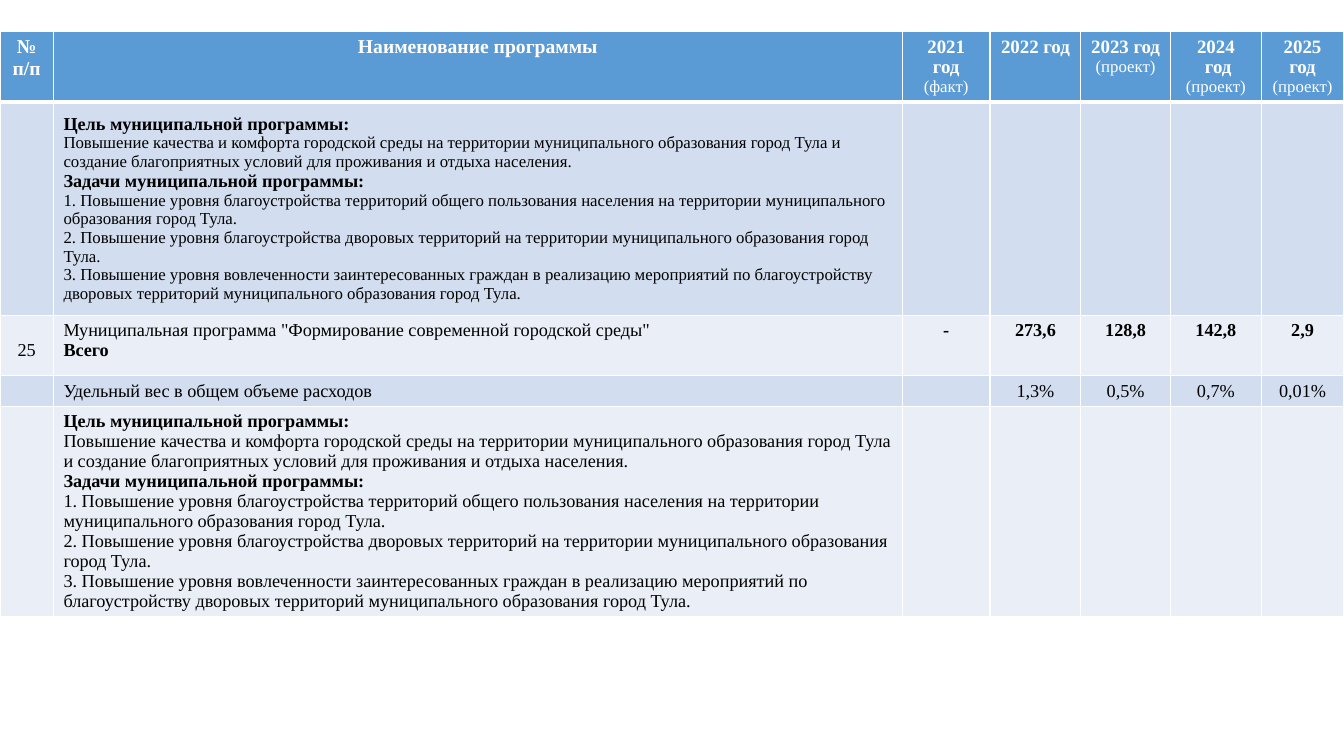
from dataclasses import dataclass

from lxml import etree
from pptx import Presentation
from pptx.dml.color import RGBColor
from pptx.enum import text
from pptx.oxml import ns
from pptx.util import Inches, Pt


@dataclass(frozen=True)
class Theme:
    """Colours, type and line sizes of the slide."""
    font: str = "Times New Roman"
    header: str = "5B9BD5"
    dark_band: str = "D2DEEF"
    light_band: str = "EAEFF7"
    white: str = "FFFFFF"
    black: str = "000000"
    title: float = 14
    year: float = 13.5
    body: float = 13
    small: float = 12
    rule: float = 1
    header_rule: float = 3


THEME = Theme()
COLUMNS = [0.53, 8.42, 0.87, 0.9, 0.89, 0.9, 0.82]
ROWS = [0.7, 2.12, 0.6, 0.3, 2.08]
FILLS = [THEME.header] + [THEME.dark_band, THEME.light_band] * 2

GOAL = ("Повышение качества и комфорта городской среды на территории муниципального образования "
        "город Тула и создание благоприятных условий для проживания и отдыха населения.")
TASKS = [
    "1. Повышение уровня благоустройства территорий общего пользования населения "
    "на территории муниципального образования город Тула.",
    "2. Повышение уровня благоустройства дворовых территорий "
    "на территории муниципального образования город Тула.",
    "3. Повышение уровня вовлеченности заинтересованных граждан в реализацию мероприятий "
    "по благоустройству дворовых территорий муниципального образования город Тула.",
]
PROGRAM = 'Муниципальная программа "Формирование современной городской среды"'
TOTALS = ["-", "273,6", "128,8", "142,8", "2,9"]
SHARES = ["", "1,3%", "0,5%", "0,7%", "0,01%"]


def run(words, size=THEME.body, bold=False, color=THEME.black):
    """Return one run of words with its font format."""
    return words, {"name": THEME.font, "size": Pt(size), "bold": bold}, color


def heading(words, size=THEME.year):
    """Return a bold white run for the header row."""
    return run(words, size, True, THEME.white)


def note(words):
    """Return a small white run for the header row."""
    return run(words, THEME.small, False, THEME.white)


def goals(size):
    """Return the paragraphs with the aim and the tasks of the programme."""
    return [[run("Цель муниципальной программы:", bold=True)], [run(GOAL, size)],
            [run("Задачи муниципальной программы:", bold=True)],
            *([run(task, size)] for task in TASKS)]


def program_rows():
    """Return the cells of every row as lists of paragraphs."""
    project = [note("(проект)")]
    header = [
        [[heading("№ п/п", THEME.title)]],
        [[heading("Наименование программы", THEME.title)]],
        [[heading("2021 год "), note("(факт)")]],
        [[heading("2022 год ")]],
        [[heading("2023 год")], project],
        [[heading("2024")], [heading(" год")], project],
        [[heading("2025")], [heading("год")], project],
    ]
    blanks = [[] for year in TOTALS]
    return [
        header,
        [[], goals(THEME.small), *blanks],
        [[[run("25")]], [[run(PROGRAM)], [run("Всего", bold=True)]],
         *([[run(total, bold=True)]] for total in TOTALS)],
        [[], [[run("Удельный вес в общем объеме расходов")]],
         *([[run(share)]] if share else [] for share in SHARES)],
        [[], goals(THEME.body), *blanks],
    ]


def write_cell(cell, paragraphs, align):
    """Write the paragraphs into a cell, keeping an empty cell low."""
    frame = cell.text_frame
    if not paragraphs:
        etree.SubElement(frame.paragraphs[0]._p, ns.qn("a:endParaRPr"),
                         sz=str(int(THEME.small * 100)))
    for index, runs in enumerate(paragraphs):
        paragraph = frame.add_paragraph() if index else frame.paragraphs[0]
        paragraph.alignment = align
        for words, formats, color in runs:
            piece = paragraph.add_run()
            piece.text = words
            for key, value in formats.items():
                setattr(piece.font, key, value)
            piece.font.color.rgb = RGBColor.from_string(color)


def paint_cell(cell, fill, rules):
    """Draw the white cell borders and the fill."""
    properties = cell._tc.get_or_add_tcPr()
    for side, width in rules.items():
        line = etree.SubElement(properties, ns.qn(f"a:ln{side}"), w=str(Pt(width)))
        solid = etree.SubElement(line, ns.qn("a:solidFill"))
        etree.SubElement(solid, ns.qn("a:srgbClr"), val=THEME.white)
    cell.fill.solid()
    cell.fill.fore_color.rgb = RGBColor.from_string(fill)


def add_program_table(slide, left, top, width, height):
    """Place the programme table in the given box."""
    table = slide.shapes.add_table(len(ROWS), len(COLUMNS), left, top, width, height).table
    for column, share in zip(table.columns, COLUMNS):
        column.width = int(width * share / sum(COLUMNS))
    for row, share in zip(table.rows, ROWS):
        row.height = int(height * share / sum(ROWS))
    for r, cells in enumerate(program_rows()):
        rules = dict.fromkeys("LRTB", THEME.rule)
        if r < 2:
            rules["TB"[r == 0]] = THEME.header_rule
        for c, paragraphs in enumerate(cells):
            cell = table.cell(r, c)
            left_aligned = r > 0 and c == 1
            write_cell(cell, paragraphs,
                       text.PP_ALIGN.LEFT if left_aligned else text.PP_ALIGN.CENTER)
            paint_cell(cell, FILLS[r], rules)
            if (r, c) == (1, 1) or (r == 3 and c > 1):
                cell.vertical_anchor = text.MSO_ANCHOR.MIDDLE
    table.cell(2, 0).margin_top = Inches(0.25)


def main():
    """Build the slide and save it."""
    deck = Presentation()
    deck.slide_width, deck.slide_height = Inches(13.33), Inches(7.5)
    slide = deck.slides.add_slide(deck.slide_layouts[6])
    add_program_table(slide, Inches(0), Inches(0.31), deck.slide_width, Inches(sum(ROWS)))
    deck.save("out.pptx")


if __name__ == "__main__":
    main()
